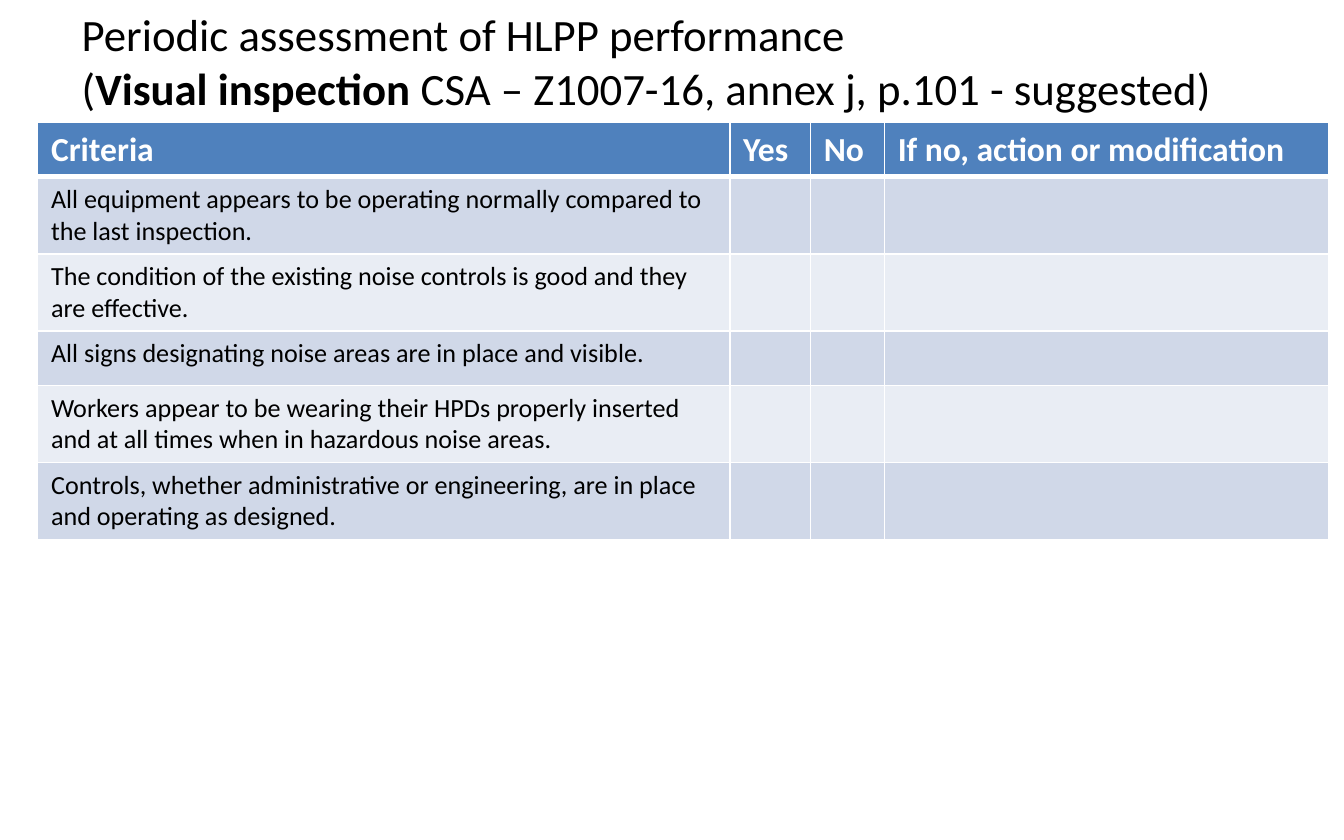
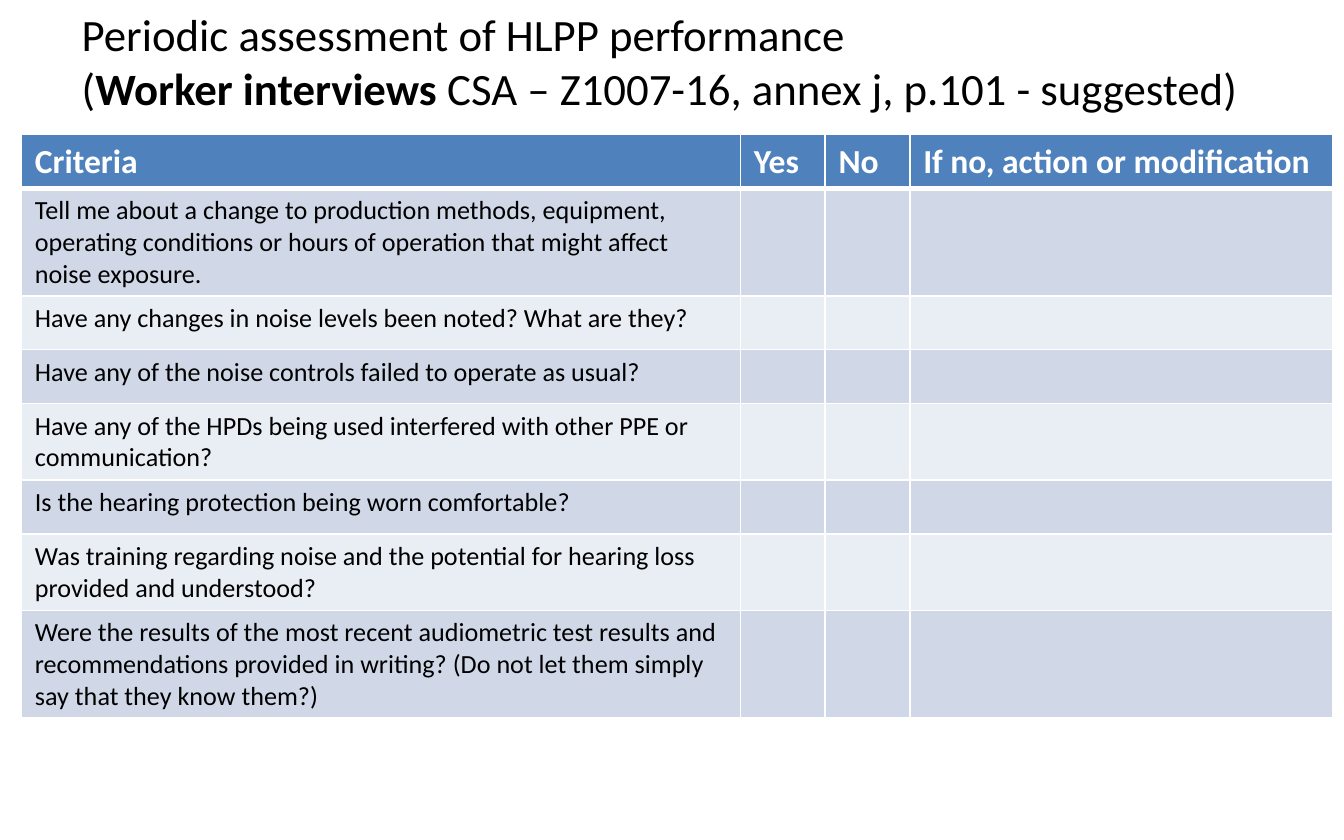
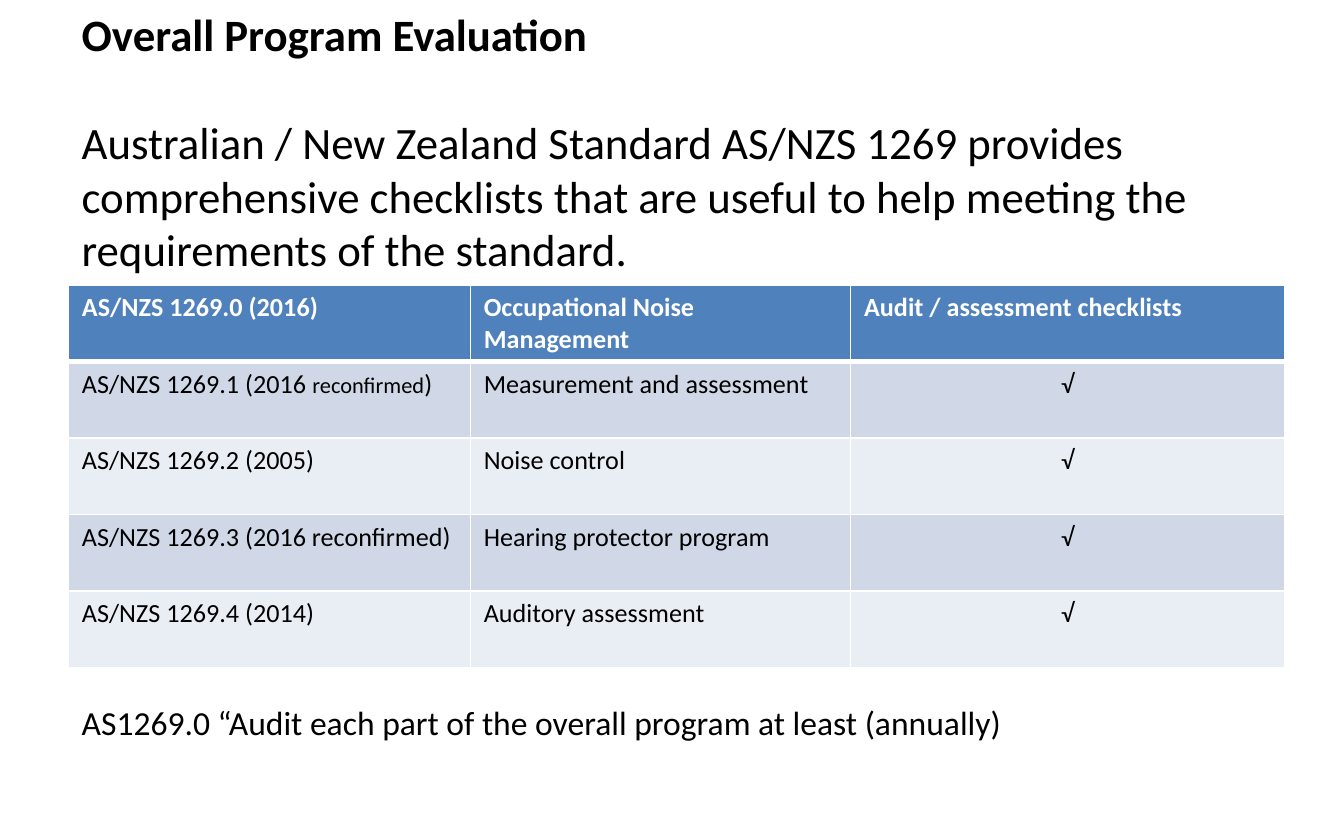
import lxml.etree
import pptx
import pptx.dml.color
import pptx.enum.text
import pptx.oxml.ns
import pptx.util

Inches = pptx.util.Inches
Pt = pptx.util.Pt

COLORS = {
    "header": "4F81BD",
    "odd_row": "D0D8E8",
    "even_row": "E9EDF4",
    "white": "FFFFFF",
    "text": "000000",
}
FONT = "Calibri"
TITLE_SIZE = 24
BODY_SIZE = 14
LEFT, WIDTH = 0.51, 9.06
ONE_LINE, TWO_LINES, THREE_LINES = 0.4, 0.57, 0.8
CHECK = "√"


def write_runs(paragraph, runs, size, color="text"):
    """Fill a paragraph with (text, bold, size) runs; a size of None means the given one."""
    for text, bold, run_size in runs:
        run = paragraph.add_run()
        run.text = text
        run.font.name = FONT
        run.font.size = Pt(run_size or size)
        run.font.bold = bold
        run.font.color.rgb = pptx.dml.color.RGBColor.from_string(COLORS[color])


def add_text(slide, top, width, height, paragraphs, size, gap=0):
    box = slide.shapes.add_textbox(Inches(LEFT), Inches(top), Inches(width), Inches(height))
    frame = box.text_frame
    frame.word_wrap = True
    frame.auto_size = pptx.enum.text.MSO_AUTO_SIZE.SHAPE_TO_FIT_TEXT
    for index, runs in enumerate(paragraphs):
        paragraph = frame.add_paragraph() if index else frame.paragraphs[0]
        if index and gap:
            paragraph.space_before = Pt(gap)
        write_runs(paragraph, runs, size)


# Content of the three slides
criteria_header = ["Criteria", "Yes", "No", "If no, action or modification"]
inspection_criteria = [
    ("All equipment appears to be operating normally compared to the last inspection.", TWO_LINES),
    ("The condition of the existing noise controls is good and they are effective.", TWO_LINES),
    ("All signs designating noise areas are in place and visible.", ONE_LINE),
    ("Workers appear to be wearing their HPDs properly inserted and at all times "
     "when in hazardous noise areas.", TWO_LINES),
    ("Controls, whether administrative or engineering, are in place and operating "
     "as designed.", TWO_LINES),
]
interview_criteria = [
    ("Tell me about a change to production methods, equipment, operating conditions "
     "or hours of operation that might affect noise exposure.", THREE_LINES),
    ("Have any changes in noise levels been noted? What are they?", ONE_LINE),
    ("Have any of the noise controls failed to operate as usual?", ONE_LINE),
    ("Have any of the HPDs being used interfered with other PPE or communication?", TWO_LINES),
    ("Is the hearing protection being worn comfortable?", ONE_LINE),
    ("Was training regarding noise and the potential for hearing loss provided "
     "and understood?", TWO_LINES),
    ("Were the results of the most recent audiometric test results and recommendations "
     "provided in writing? (Do not let them simply say that they know them?)", THREE_LINES),
]
standards = [
    ["AS/NZS 1269.0 (2016)", "Occupational Noise Management", "Audit / assessment checklists"],
    [[("AS/NZS 1269.1 (2016 ", False, None), ("reconfirmed", False, 12), (")", False, None)],
     "Measurement and assessment", CHECK],
    ["AS/NZS 1269.2 (2005)", "Noise control", CHECK],
    ["AS/NZS 1269.3 (2016 reconfirmed)", "Hearing protector program", CHECK],
    ["AS/NZS 1269.4 (2014)", "Auditory assessment", CHECK],
]

pages = []
for topic, criteria, left, top, columns in [
    ("Visual inspection ", inspection_criteria, 0.28, 0.91, [5.15, 0.6, 0.55, 3.31]),
    ("Worker interviews ", interview_criteria, 0.16, 1, [5.35, 0.63, 0.63, 3.15]),
]:
    pages.append({
        "title": [
            [("Periodic assessment of HLPP performance", False, None)],
            [("(", False, None), (topic, True, None),
             ("CSA – Z1007-16, annex j, p.101 - suggested)", False, None)],
        ],
        "title_height": 0.91, "title_gap": 0,
        "left": left, "top": top, "columns": columns, "header_size": 18,
        "heights": [ONE_LINE] + [height for _, height in criteria],
        "rows": [criteria_header] + [[text, "", "", ""] for text, _ in criteria],
    })
pages.append({
    "title": [
        [("Overall Program Evaluation", True, None)],
        [("Australian / New Zealand Standard AS/NZS 1269 provides comprehensive checklists "
          "that are useful to help meeting the requirements of the standard.", False, None)],
    ],
    "title_height": 2.12, "title_gap": 29,
    "left": LEFT, "top": 2.12, "columns": [2.99, 2.83, 3.23], "header_size": BODY_SIZE,
    "heights": [TWO_LINES] * len(standards),
    "rows": standards,
})

prs = pptx.Presentation()
prs.slide_width = Inches(10)
prs.slide_height = Inches(6.25)

for page in pages:
    slide = prs.slides.add_slide(prs.slide_layouts[6])

    # Table grid
    rows, columns, heights = page["rows"], page["columns"], page["heights"]
    checklist = slide.shapes.add_table(
        len(rows), len(columns), Inches(page["left"]), Inches(page["top"]),
        Inches(sum(columns)), Inches(sum(heights))).table
    for column, width in zip(checklist.columns, columns):
        column.width = Inches(width)
    for row, height in zip(checklist.rows, heights):
        row.height = Inches(height)

    # Cells: borders, fill, then text
    for r, entries in enumerate(rows):
        is_header = r == 0
        fill = "header" if is_header else "odd_row" if r % 2 else "even_row"
        for c, entry in enumerate(entries):
            cell = checklist.cell(r, c)
            properties = cell._tc.get_or_add_tcPr()
            for side in "LRTB":
                # The thick rule under the header is also the top edge of the first row
                thick = (r, side) in [(0, "B"), (1, "T")]
                line = lxml.etree.SubElement(
                    properties, pptx.oxml.ns.qn("a:ln" + side), w=str(Pt(3 if thick else 1)))
                solid = lxml.etree.SubElement(line, pptx.oxml.ns.qn("a:solidFill"))
                lxml.etree.SubElement(solid, pptx.oxml.ns.qn("a:srgbClr"), val=COLORS["white"])
            cell.fill.solid()
            cell.fill.fore_color.rgb = pptx.dml.color.RGBColor.from_string(COLORS[fill])
            if not entry:
                continue
            paragraph = cell.text_frame.paragraphs[0]
            if entry == CHECK:
                paragraph.alignment = pptx.enum.text.PP_ALIGN.CENTER
            runs = [(entry, is_header, None)] if isinstance(entry, str) else entry
            write_runs(paragraph, runs, page["header_size"] if is_header else BODY_SIZE,
                       "white" if is_header else "text")

    # Title
    add_text(slide, 0, WIDTH, page["title_height"], page["title"], TITLE_SIZE, page["title_gap"])

# Closing remark on the last slide
add_text(slide, 5.17, 7.4, 0.4, [[
    ("AS1269.0 “Audit each part of the overall program at least (annually)", False, None)]], 18)

prs.save("out.pptx")
